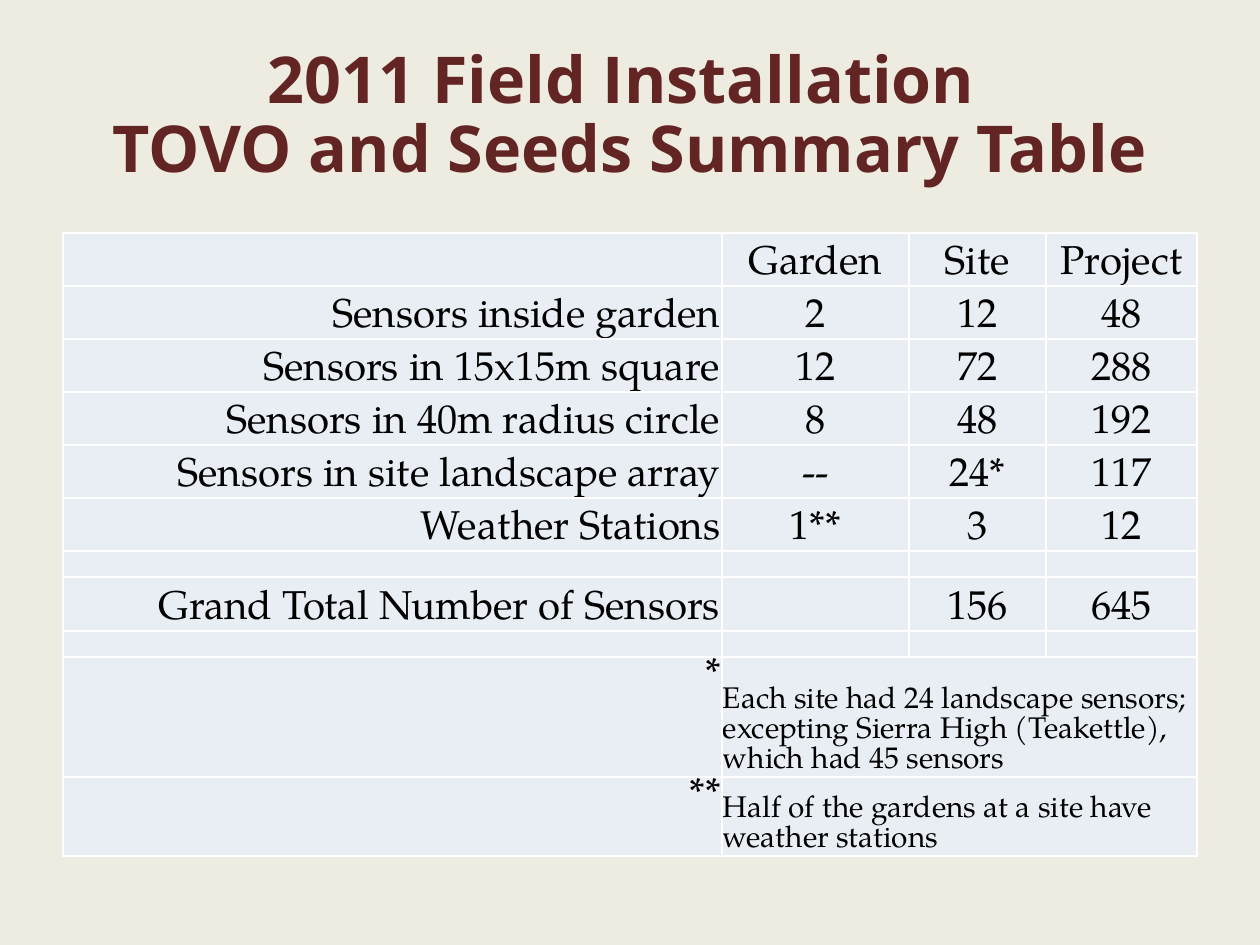
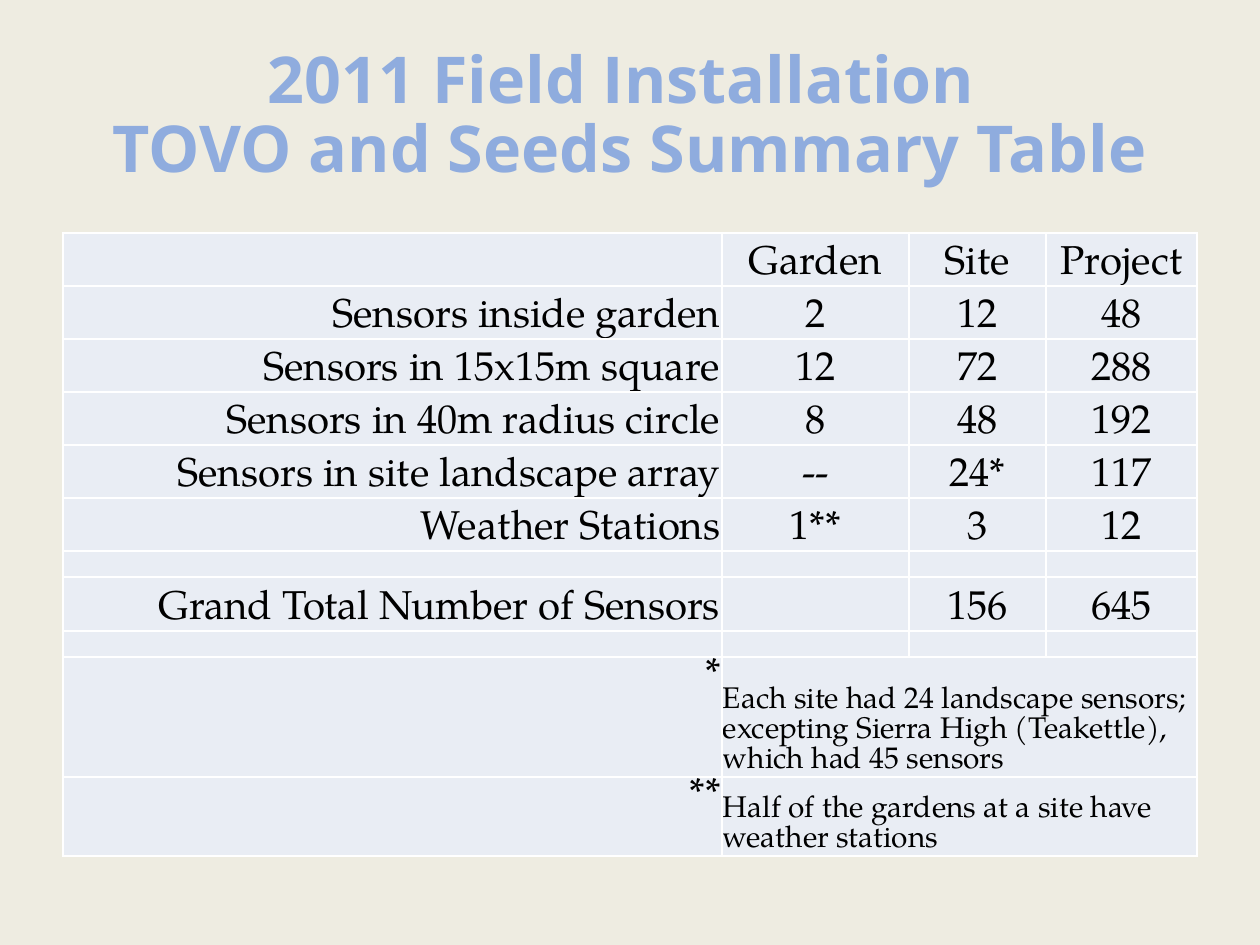
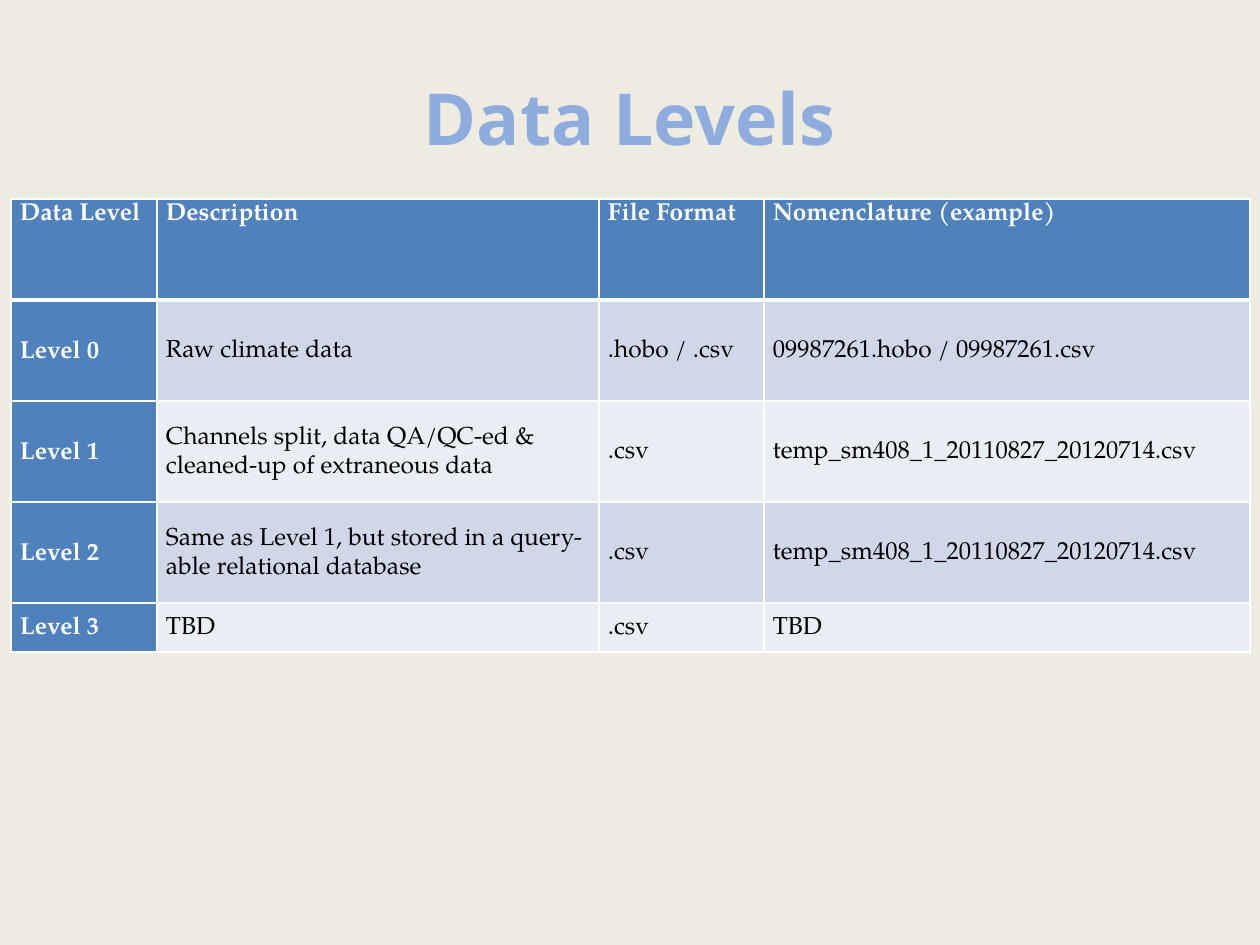
from dataclasses import dataclass

from lxml import etree
from pptx import Presentation
from pptx.dml.color import RGBColor
from pptx.enum.text import MSO_ANCHOR, PP_ALIGN
from pptx.oxml.ns import qn
from pptx.util import Emu, Pt

LEFT, CENTER, RIGHT = PP_ALIGN.LEFT, PP_ALIGN.CENTER, PP_ALIGN.RIGHT
TOP, MIDDLE, BOTTOM = MSO_ANCHOR.TOP, MSO_ANCHOR.MIDDLE, MSO_ANCHOR.BOTTOM
EDGES = ("lnL", "lnR", "lnT", "lnB")


@dataclass(frozen=True)
class Theme:
    back: str = "EEECE1"
    maroon: str = "632523"
    sky: str = "8FACDE"
    blue: str = "4F81BD"
    band: str = "D0D8E8"
    pale: str = "E9EDF4"
    white: str = "FFFFFF"
    black: str = "000000"
    head: str = "Open Sans"
    body: str = "TeX Gyre Pagella"
    title: float = 41
    long: float = 36.9
    count: float = 23
    note: float = 17
    level: float = 14
    tiny: float = 8


T = Theme()
TITLE_BOX = (63, 38, 1134, 158)
COUNT_BOX = (63, 233, 1134, 624)
LEVEL_BOX = (11, 199, 1239, 453)

SUMMARY = "2011 Field Installation \vTOVO and Seeds Summary Table"
COUNTS = [
    ("", "Garden", "Site", "Project"),
    ("Sensors inside garden", "2", "12", "48"),
    ("Sensors in 15x15m square", "12", "72", "288"),
    ("Sensors in 40m radius circle", "8", "48", "192"),
    ("Sensors in site landscape array", "--", "24*", "117"),
    ("Weather Stations", "1**", "3", "12"),
    ("", "", "", ""),
    ("Grand Total Number of Sensors", "", "156", "645"),
    ("", "", "", ""),
]
NOTES = [
    ("*", "Each site had 24 landscape sensors; excepting Sierra High "
          "(Teakettle), which had 45 sensors"),
    ("**", "Half of the gardens at a site have weather stations"),
]
LEVELS = [
    ("Data Level", "Description", "File Format", "Nomenclature (example)"),
    ("Level 0", "Raw climate data", ".hobo / .csv",
     "09987261.hobo / 09987261.csv"),
    ("Level 1", "Channels split, data QA/QC-ed & cleaned-up of extraneous data",
     ".csv", "temp_sm408_1_20110827_20120714.csv"),
    ("Level 2", "Same as Level 1, but stored in a query-able relational database",
     ".csv", "temp_sm408_1_20110827_20120714.csv"),
    ("Level 3", "TBD", ".csv", "TBD"),
]


def px(n):
    return Emu(round(n * 914400 / 126))


def write(para, text, size, color, face=T.body, bold=False, align=LEFT, space=1.0):
    para.text = text
    para.alignment, para.line_spacing = align, space
    for run in para.runs:
        look = {"size": Pt(size), "name": face, "bold": bold}
        for key, value in look.items():
            setattr(run.font, key, value)
        run.font.color.rgb = RGBColor.from_string(color)
    if not text:
        end = etree.SubElement(para._p, qn("a:endParaRPr"))
        end.set("sz", str(T.tiny * 100))


def add_title(slide, box, text, color, size, space=1.0):
    frame = slide.shapes.add_textbox(*map(px, box)).text_frame
    frame.word_wrap, frame.vertical_anchor = True, MIDDLE
    write(frame.paragraphs[0], text, size, color, T.head, True, CENTER, space)


def add_grid(slide, box, cols, rows):
    table = slide.shapes.add_table(len(rows), len(cols), *map(px, box)).table
    for col, width in zip(table.columns, cols):
        col.width = px(width)
    for row, height in zip(table.rows, rows):
        row.height = px(height)
    return table


def dress(cell, fill, anchor, pads, thick=""):
    """Set fill, anchor, margins and white edges; the edge named thick is 3 pt."""
    cell.fill.solid()
    cell.fill.fore_color.rgb = RGBColor.from_string(fill)
    cell.vertical_anchor = anchor
    for side, pad in zip(("left", "top", "right", "bottom"), pads):
        setattr(cell, f"margin_{side}", px(pad))
    props = cell._tc.get_or_add_tcPr()
    for i, edge in enumerate(EDGES):
        line = etree.Element(qn(f"a:{edge}"), w=str(Pt(3 if edge == thick else 1)))
        paint = etree.SubElement(line, qn("a:solidFill"))
        etree.SubElement(paint, qn("a:srgbClr"), val=T.white)
        props.insert(i, line)


def add_counts(slide, box):
    heights = [53] * 6 + [26, 54, 26, 120, 79]
    table = add_grid(slide, box, [659, 187, 137, 151], heights)
    rows = COUNTS + [(mark, note, "", "") for mark, note in NOTES]
    for r, row in enumerate(rows):
        noted = r >= len(COUNTS)
        for c, text in enumerate(row):
            cell = table.cell(r, c)
            dress(cell, T.pale, TOP if noted and c == 0 else BOTTOM, (1, 1, 1, 0))
            align = RIGHT if c == 0 else LEFT if noted else CENTER
            size = T.note if noted and c else T.count
            write(cell.text_frame.paragraphs[0], text, size, T.black, align=align)
        if noted:
            table.cell(r, 1).merge(table.cell(r, 3))


def add_levels(slide, box):
    table = add_grid(slide, box, [146, 442, 165, 486], [101] * 4 + [49])
    for r, row in enumerate(LEVELS):
        for c, text in enumerate(row):
            cell = table.cell(r, c)
            head = r == 0 or c == 0
            fill = T.blue if head else T.band if r % 2 else T.pale
            thick = {0: "lnB", 1: "lnT"}.get(r, "")
            dress(cell, fill, MIDDLE if r else TOP, (9, 0, 9, 0), thick)
            write(cell.text_frame.paragraphs[0], text, T.level,
                  T.white if head else T.black, bold=head, space=1.15)


def main():
    deck = Presentation()
    deck.slide_width, deck.slide_height = px(1260), px(945)
    back = deck.slide_master.background.fill
    back.solid()
    back.fore_color.rgb = RGBColor.from_string(T.back)
    blank = deck.slide_layouts[6]

    for color in (T.maroon, T.sky):
        slide = deck.slides.add_slide(blank)
        add_title(slide, TITLE_BOX, SUMMARY, color, T.long, 0.9)
        add_counts(slide, COUNT_BOX)

    slide = deck.slides.add_slide(blank)
    add_title(slide, TITLE_BOX, "Data Levels", T.sky, T.title)
    add_levels(slide, LEVEL_BOX)
    deck.save("out.pptx")


if __name__ == "__main__":
    main()
